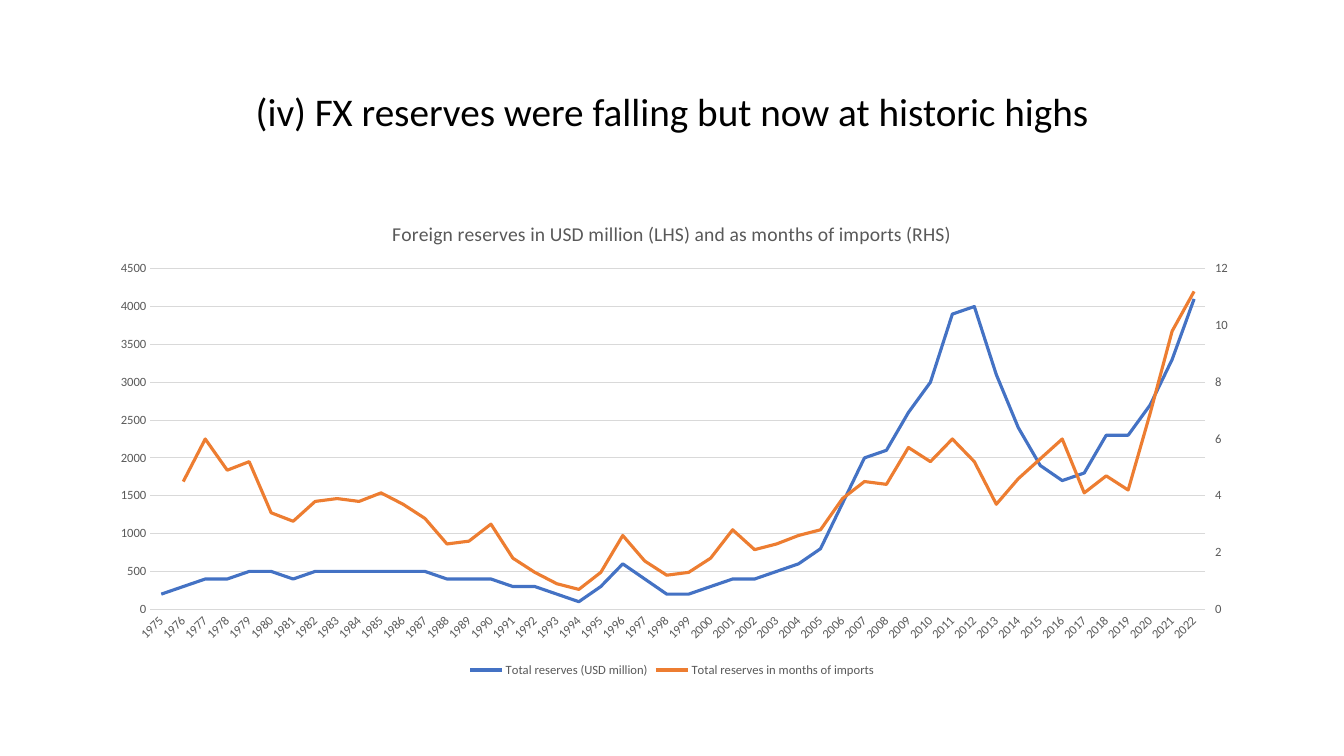
from copy import deepcopy

from lxml import etree
from pptx import Presentation
from pptx.chart.data import CategoryChartData
from pptx.dml.color import RGBColor
from pptx.enum.chart import XL_CHART_TYPE, XL_LEGEND_POSITION, XL_TICK_MARK
from pptx.enum.text import MSO_ANCHOR, PP_ALIGN
from pptx.util import Pt

LINE_CHART = XL_CHART_TYPE.LINE
LEGEND_BOTTOM = XL_LEGEND_POSITION.BOTTOM
NO_TICK = XL_TICK_MARK.NONE
MIDDLE = MSO_ANCHOR.MIDDLE
CENTER = PP_ALIGN.CENTER

FONT = "Calibri"
COLORS = {
    "title": "000000",
    "label": "595959",
    "grid": "D9D9D9",
    "reserves": "4472C4",
    "months": "ED7D31",
}
TITLE = "(iv) FX reserves were falling but now at historic highs"
CHART_TITLE = "Foreign reserves in USD million (LHS) and as months of imports (RHS)"
YEARS = [str(year) for year in range(1975, 2023)]
RESERVES = [
    200, 300, 400, 400, 500, 500, 400, 500, 500, 500, 500, 500,
    500, 400, 400, 400, 300, 300, 200, 100, 300, 600, 400, 200,
    200, 300, 400, 400, 500, 600, 800, 1400, 2000, 2100, 2600, 3000,
    3900, 4000, 3100, 2400, 1900, 1700, 1800, 2300, 2300, 2700, 3300, 4100,
]
MONTHS = [
    None, 4.5, 6, 4.9, 5.2, 3.4, 3.1, 3.8, 3.9, 3.8, 4.1, 3.7,
    3.2, 2.3, 2.4, 3, 1.8, 1.3, 0.9, 0.7, 1.3, 2.6, 1.7, 1.2,
    1.3, 1.8, 2.8, 2.1, 2.3, 2.6, 2.8, 3.9, 4.5, 4.4, 5.7, 5.2,
    6, 5.2, 3.7, 4.6, 5.3, 6, 4.1, 4.7, 4.2, 6.9, 9.8, 11.2,
]
LEFT_AXIS = {"minimum_scale": 0, "maximum_scale": 4500, "major_unit": 500,
             "major_tick_mark": NO_TICK, "minor_tick_mark": NO_TICK}
RIGHT_AXIS = {"c:scaling/c:max": "12", "c:majorUnit": "2", "c:axPos": "r",
              "c:majorTickMark": "out", "c:crosses": "max"}
PLOT_LAYOUT = {"layoutTarget": "inner", "xMode": "edge", "yMode": "edge",
               "x": "0.05", "y": "0.14", "w": "0.91", "h": "0.71"}


def apply_format(target, values):
    for name, value in values.items():
        setattr(target, name, value)


def style_font(font, size, color):
    apply_format(font, {"name": FONT, "size": Pt(size), "bold": False})
    font.color.rgb = RGBColor.from_string(COLORS[color])


def style_line(line, color, width):
    line.color.rgb = RGBColor.from_string(COLORS[color])
    line.width = Pt(width)


def add_title(slide):
    frame = slide.shapes.add_textbox(Pt(66), Pt(28.8), Pt(828), Pt(104.4)).text_frame
    apply_format(frame, {"word_wrap": True, "vertical_anchor": MIDDLE})
    paragraph = frame.paragraphs[0]
    apply_format(paragraph, {"text": TITLE, "alignment": CENTER, "line_spacing": 0.9})
    style_font(paragraph.runs[0].font, 28, "title")


def style_axes(chart):
    years, reserves = chart.category_axis, chart.value_axis
    for axis in (years, reserves):
        style_font(axis.tick_labels.font, 9, "label")
    apply_format(years, {"major_tick_mark": NO_TICK, "minor_tick_mark": NO_TICK})
    style_line(years.format.line, "grid", 0.75)
    apply_format(reserves, LEFT_AXIS)
    reserves.format.line.fill.background()
    style_line(reserves.major_gridlines.format.line, "grid", 0.75)
    apply_format(reserves.tick_labels, {"number_format": "General",
                                        "number_format_is_linked": False})
    chart.element.xpath(".//c:catAx/c:txPr/a:bodyPr")[0].set("rot", "-2700000")


def move_months_to_right_axis(chart):
    plot_area = chart.element.xpath(".//c:plotArea")[0]
    left_plot = plot_area.xpath("c:lineChart")[0]
    right_plot = deepcopy(left_plot)
    left_plot.remove(left_plot.xpath("c:ser")[1])
    right_plot.remove(right_plot.xpath("c:ser")[0])
    left_plot.addnext(right_plot)

    year_axis = plot_area.xpath("c:catAx")[0]
    left_axis = plot_area.xpath("c:valAx")[0]
    right_axis, hidden_axis = deepcopy(left_axis), deepcopy(year_axis)
    left_axis.addnext(right_axis)
    right_axis.addnext(hidden_axis)
    right_axis.remove(right_axis.xpath("c:majorGridlines")[0])
    for route, value in RIGHT_AXIS.items():
        right_axis.xpath(route)[0].set("val", value)
    hidden_axis.xpath("c:delete")[0].set("val", "1")

    new_ids = {year_axis.xpath("c:axId")[0].get("val"): "5001",
               left_axis.xpath("c:axId")[0].get("val"): "5002"}
    for part in (right_plot, right_axis, hidden_axis):
        for reference in part.xpath("c:axId | c:crossAx"):
            reference.set("val", new_ids[reference.get("val")])


def set_plot_layout(chart):
    plot_area = chart.element.xpath(".//c:plotArea")[0]
    for layout in plot_area.xpath("c:layout"):
        plot_area.remove(layout)
    namespace = etree.QName(plot_area).namespace
    layout = etree.Element(f"{{{namespace}}}layout")
    manual = etree.SubElement(layout, f"{{{namespace}}}manualLayout")
    for name, value in PLOT_LAYOUT.items():
        etree.SubElement(manual, f"{{{namespace}}}{name}").set("val", value)
    plot_area.insert(0, layout)


def add_reserves_chart(slide):
    data = CategoryChartData()
    data.categories = YEARS
    data.add_series("Total reserves (USD million)", RESERVES)
    data.add_series("Total reserves in months of imports", MONTHS)
    chart = slide.shapes.add_chart(
        LINE_CHART, Pt(66), Pt(144), Pt(828), Pt(342.7), data).chart
    style_font(chart.font, 10, "title")

    chart.has_title = True
    chart.chart_title.include_in_layout = False
    paragraph = chart.chart_title.text_frame.paragraphs[0]
    paragraph.text = CHART_TITLE
    style_font(paragraph.runs[0].font, 14, "label")

    chart.has_legend = True
    apply_format(chart.legend, {"position": LEGEND_BOTTOM, "include_in_layout": False})
    style_font(chart.legend.font, 9, "label")

    chart.plots[0].vary_by_categories = False
    for series, color in zip(chart.plots[0].series, ("reserves", "months")):
        series.smooth = False
        style_line(series.format.line, color, 2.25)

    style_axes(chart)
    move_months_to_right_axis(chart)
    set_plot_layout(chart)


def main():
    presentation = Presentation()
    apply_format(presentation, {"slide_width": Pt(960), "slide_height": Pt(540)})
    slide = presentation.slides.add_slide(presentation.slide_layouts[6])
    add_title(slide)
    add_reserves_chart(slide)
    presentation.save("out.pptx")


if __name__ == "__main__":
    main()
